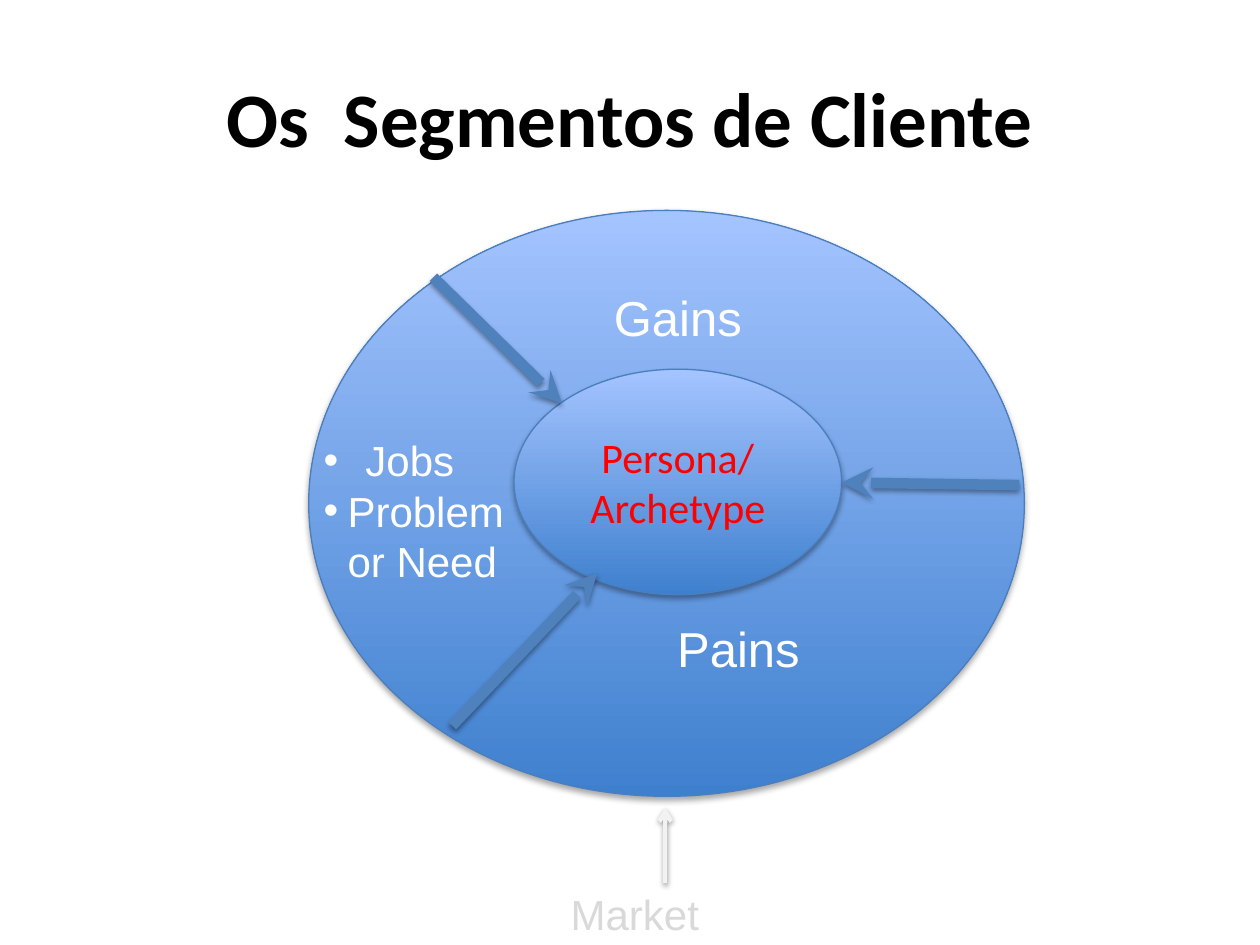
"""Build the customer segments slide."""
from pptx import Presentation, util as u
from pptx.dml.color import RGBColor
from pptx.enum import shapes, text
from pptx.oxml import parse_xml
from pptx.oxml.ns import nsdecls, qn

HUES = {"low": "3F80CE", "high": "A4C4FF", "rim": "4B7EBC", "arrow": "4F81BD",
        "red": "FF0000", "white": "FFFFFF", "black": "000000",
        "grey": "D9D9D9", "pale": "F2F2F2"}


def hue(name):
    """Return the named colour."""
    return RGBColor.from_string(HUES[name])


def shade(item, alpha, dist):
    """Cast a soft shadow straight down."""
    props = item._element.spPr
    for old in props.findall(qn("a:effectLst")):
        props.remove(old)
    props.append(parse_xml(
        f'<a:effectLst {nsdecls("a")}><a:outerShdw blurRad="{u.Pt(3.1)}" '
        f'dist="{u.Pt(dist)}" dir="5400000" rotWithShape="0">'
        f'<a:srgbClr val="{HUES["black"]}"><a:alpha val="{alpha * 1000}"/>'
        '</a:srgbClr></a:outerShdw></a:effectLst>'))


def write(frame, words, size=24, color="white", font="Arial", bold=False,
          align=text.PP_ALIGN.CENTER, anchor=text.MSO_ANCHOR.TOP, wrap=True):
    """Fill a frame with one paragraph per line of words."""
    frame.word_wrap = wrap
    frame.vertical_anchor = anchor
    frame.text = words
    for para in frame.paragraphs:
        para.alignment = align
        face = para.runs[0].font
        face.name, face.size, face.bold = font, u.Pt(size), bold
        face.color.rgb = hue(color)


def label(slide, words, box, **style):
    """Add a text box and return its frame."""
    frame = slide.shapes.add_textbox(*map(u.Inches, box)).text_frame
    write(frame, words, **style)
    return frame


def bullet(para, indent):
    """Give a paragraph a hanging bullet."""
    props = para._p.get_or_add_pPr()
    props.set("marL", str(u.Inches(indent)))
    props.set("indent", str(-u.Inches(indent)))
    props.append(parse_xml(f'<a:buFont {nsdecls("a")} typeface="Arial"/>'))
    props.append(parse_xml(f'<a:buChar {nsdecls("a")} char="•"/>'))


def oval(slide, box):
    """Add a shaded ellipse with a vertical gradient."""
    item = slide.shapes.add_shape(shapes.MSO_SHAPE.OVAL, *map(u.Inches, box))
    item.fill.gradient()
    item.fill.gradient_angle = 90
    for stop, name in zip(item.fill.gradient_stops, ("low", "high")):
        stop.color.rgb = hue(name)
    item.line.color.rgb = hue("rim")
    item.line.width = u.Pt(0.75)
    shade(item, 35, 1.8)
    return item


def arrow(slide, ends, color="arrow", width=6, head="stealth"):
    """Add a shaded line with an arrowhead at its end."""
    item = slide.shapes.add_connector(
        shapes.MSO_CONNECTOR.STRAIGHT, *map(u.Inches, ends))
    item.line.color.rgb = hue(color)
    item.line.width = u.Pt(width)
    item.line._get_or_add_ln().append(
        parse_xml(f'<a:tailEnd {nsdecls("a")} type="{head}"/>'))
    shade(item, 38, 1.6)


def main():
    """Build and save the slide."""
    deck = Presentation()
    deck.slide_width, deck.slide_height = u.Inches(10), u.Inches(7.5)
    slide = deck.slides.add_slide(deck.slide_layouts[5])

    title = slide.shapes.title
    title.left, title.top, title.width, title.height = map(
        u.Inches, (0.5, 0.3, 9, 1.25))
    write(title.text_frame, "Os  Segmentos de Cliente", size=44, color="black",
          font="Calibri", bold=True, anchor=text.MSO_ANCHOR.MIDDLE)

    oval(slide, (2.45, 1.67, 5.68, 4.65))
    core = oval(slide, (4.08, 2.93, 2.6, 1.79))
    write(core.text_frame, "Persona/ Archetype", color="red", font="Calibri",
          anchor=text.MSO_ANCHOR.MIDDLE)

    for ends in ((3.44, 2.2, 4.46, 3.2), (3.59, 5.76, 4.74, 4.55),
                 (8.09, 3.85, 6.68, 3.83)):
        arrow(slide, ends)

    jobs = label(slide, " Jobs\nProblem or Need", (2.47, 3.4, 2, 1.31),
                 align=text.PP_ALIGN.LEFT)
    for para, indent in zip(jobs.paragraphs, (0.24, 0.19)):
        bullet(para, indent)
    label(slide, "Gains", (4.35, 2.23, 2.06, 0.57), size=28)
    label(slide, "Pains", (5.02, 4.86, 1.68, 0.57), size=28)

    label(slide, "Market", (4.43, 7, 1.91, 0.5), color="grey",
          align=text.PP_ALIGN.LEFT)
    arrow(slide, (5.28, 7.01, 5.28, 6.41), color="pale", width=2.5, head="arrow")
    deck.save("out.pptx")


if __name__ == "__main__":
    main()
